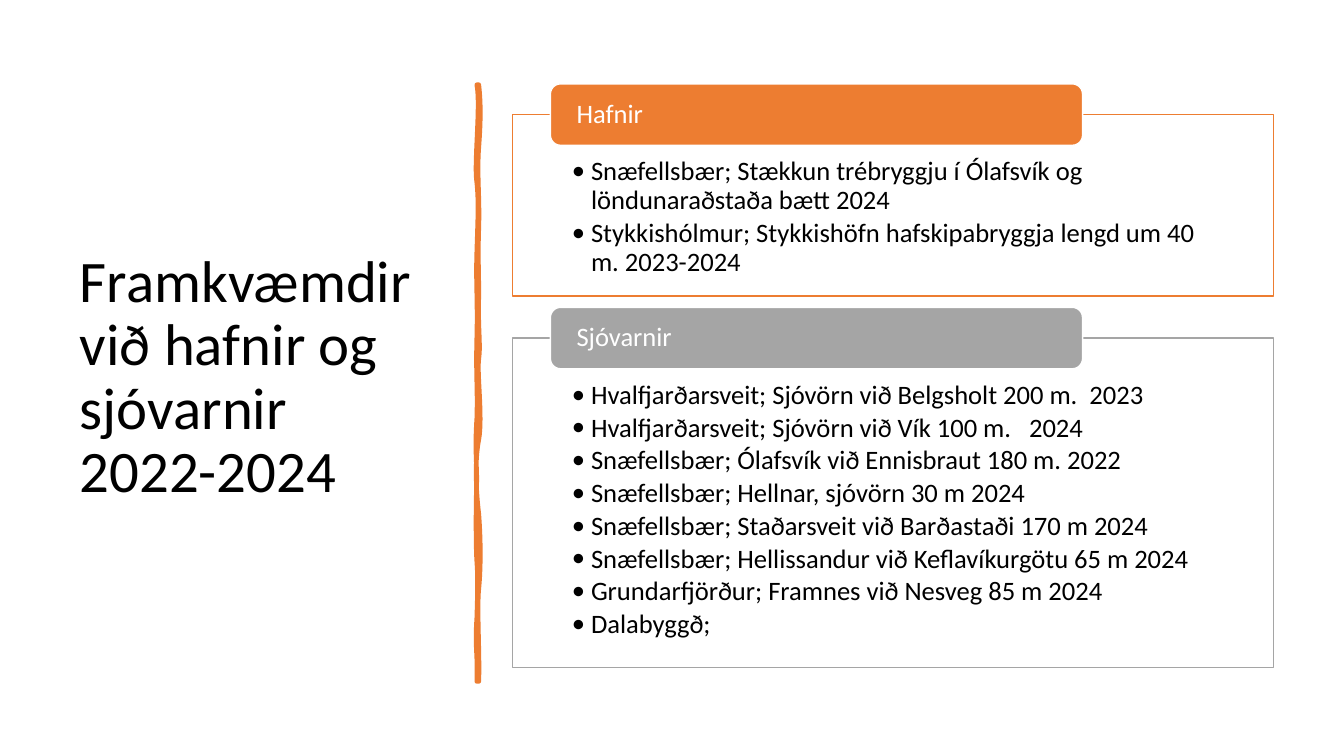
"""Build the slide on harbour and sea defence works."""
from dataclasses import dataclass

from lxml import etree
from pptx import Presentation
from pptx.dml.color import RGBColor
from pptx.enum.shapes import MSO_SHAPE
from pptx.enum.text import MSO_ANCHOR, PP_ALIGN
from pptx.oxml.ns import qn
from pptx.shapes.autoshape import Shape
from pptx.slide import Slide
from pptx.text.text import TextFrame, _Paragraph
from pptx.util import Emu, Inches, Pt

RECTANGLE = MSO_SHAPE.RECTANGLE
ROUNDED = MSO_SHAPE.ROUNDED_RECTANGLE
TOP, MIDDLE = MSO_ANCHOR.TOP, MSO_ANCHOR.MIDDLE
LEFT = PP_ALIGN.LEFT

ORANGE = RGBColor(0xED, 0x7D, 0x31)
GRAY = RGBColor(0xA5, 0xA5, 0xA5)
WHITE = RGBColor(0xFF, 0xFF, 0xFF)
BLACK = RGBColor(0x00, 0x00, 0x00)

FONT = "Calibri"
TITLE_SIZE, BODY_SIZE = 42, 19
SLIDE_WIDTH, SLIDE_HEIGHT = Inches(13.333), Inches(7.5)
GRID_ROWS = 750
CELL = SLIDE_HEIGHT // GRID_ROWS

PANEL_LEFT, PANEL_WIDTH = 508.3, 755
TAB_LEFT, TAB_WIDTH, TAB_HEIGHT, TAB_RISE = 546, 528, 61, 30.5
BULLET_INDENT = 19

BRUSH_START = (475, 84)
BRUSH_CURVES = (
    ((477, 102), (477, 119), (475, 146)),
    ((473, 173), (476, 195), (475, 226)),
    ((474, 257), (475, 262), (475, 294)),
    ((474, 325), (477, 342), (475, 356)),
    ((473, 370), (479, 414), (475, 436)),
    ((471, 457), (472, 484), (475, 510)),
    ((477, 536), (477, 564), (475, 584)),
    ((473, 603), (476, 650), (475, 676)),
    ((474, 676), (473, 676), (473, 676)),
    ((474, 646), (471, 644), (473, 613)),
    ((474, 583), (474, 570), (473, 557)),
    ((472, 544), (472, 495), (473, 477)),
    ((473, 459), (471, 445), (473, 415)),
    ((474, 386), (472, 373), (473, 335)),
    ((474, 298), (472, 281), (473, 250)),
    ((474, 218), (475, 200), (473, 181)),
    ((470, 163), (477, 104), (473, 84)),
    ((474, 84), (474, 84), (475, 84)),
)


@dataclass(frozen=True)
class Box:
    """A place in grid cells."""
    left: float
    top: float
    width: float
    height: float

    def lengths(self) -> tuple[Emu, Emu, Emu, Emu]:
        """Return the place as slide lengths."""
        return cells(self.left), cells(self.top), cells(self.width), cells(self.height)


@dataclass(frozen=True)
class Panel:
    """A headed frame with a list of works."""
    heading: str
    color: RGBColor
    top: float
    height: float
    works: tuple[str, ...]


TITLE = "Framkvæmdir við hafnir og sjóvarnir 2022-2024"
TITLE_BOX = Box(69.5, 70, 374, 611)
PANELS = (
    Panel("Hafnir", ORANGE, 113.7, 180, (
        "Snæfellsbær; Stækkun trébryggju í Ólafsvík og löndunaraðstaða bætt 2024",
        "Stykkishólmur; Stykkishöfn hafskipabryggja lengd um 40 m. 2023-2024",
    )),
    Panel("Sjóvarnir", GRAY, 335.4, 327, (
        "Hvalfjarðarsveit; Sjóvörn við Belgsholt 200 m.  2023",
        "Hvalfjarðarsveit; Sjóvörn við Vík 100 m.   2024",
        "Snæfellsbær; Ólafsvík við Ennisbraut 180 m. 2022",
        "Snæfellsbær; Hellnar, sjóvörn 30 m 2024",
        "Snæfellsbær; Staðarsveit við Barðastaði 170 m 2024",
        "Snæfellsbær; Hellissandur við Keflavíkurgötu 65 m 2024",
        "Grundarfjörður; Framnes við Nesveg 85 m 2024",
        "Dalabyggð;",
    )),
)


def cells(count: float) -> Emu:
    """Turn grid cells into a slide length."""
    return Emu(round(count * CELL))


def set_frame(frame: TextFrame, anchor: MSO_ANCHOR, insets: tuple[int, int, int, int]) -> None:
    """Set wrapping, anchor and insets of a text frame."""
    frame.word_wrap = True
    frame.vertical_anchor = anchor
    frame.margin_left, frame.margin_top, frame.margin_right, frame.margin_bottom = map(cells, insets)


def write(paragraph: _Paragraph, text: str, size: float, color: RGBColor) -> None:
    """Add one run of text to a paragraph."""
    paragraph.alignment = LEFT
    paragraph.line_spacing = 0.9
    run = paragraph.add_run()
    run.text = text
    run.font.name = FONT
    run.font.size = Pt(size)
    run.font.color.rgb = color


def add_bullet(paragraph: _Paragraph) -> None:
    """Give a paragraph a hanging bullet."""
    paragraph.level = 1
    paragraph.space_after = Pt(2.85)
    properties = paragraph._p.get_or_add_pPr()
    properties.set("marL", str(cells(BULLET_INDENT)))
    properties.set("indent", str(-cells(BULLET_INDENT)))
    etree.SubElement(properties, qn("a:buFont")).set("typeface", FONT)
    etree.SubElement(properties, qn("a:buChar")).set("char", "•")


def paint(shape: Shape, fill: RGBColor, line: RGBColor, width: float) -> None:
    """Set the fill and line of a shape."""
    shape.shadow.inherit = False
    shape.fill.solid()
    shape.fill.fore_color.rgb = fill
    shape.line.color.rgb = line
    shape.line.width = Pt(width)


def add_title(slide: Slide) -> None:
    """Add the slide title."""
    frame = slide.shapes.add_textbox(*TITLE_BOX.lengths()).text_frame
    set_frame(frame, MIDDLE, (10, 5, 10, 5))
    write(frame.paragraphs[0], TITLE, TITLE_SIZE, BLACK)


def add_brush_stroke(slide: Slide) -> None:
    """Draw the wavy upright divider with curved segments."""
    builder = slide.shapes.build_freeform(*BRUSH_START, scale=CELL)
    builder.add_line_segments([point for curve in BRUSH_CURVES for point in curve], close=True)
    stroke = builder.convert_to_shape()
    paint(stroke, ORANGE, ORANGE, 3.25)
    segments = list(stroke._element.iter(qn("a:lnTo")))
    for first in range(0, len(segments), 3):
        curve = etree.Element(qn("a:cubicBezTo"))
        segments[first].addprevious(curve)
        for segment in segments[first:first + 3]:
            curve.append(segment[0])
            segment.getparent().remove(segment)


def add_panel(slide: Slide, panel: Panel) -> None:
    """Add a frame with its list and heading tab."""
    frame_box = Box(PANEL_LEFT, panel.top, PANEL_WIDTH, panel.height)
    frame_shape = slide.shapes.add_shape(RECTANGLE, *frame_box.lengths())
    paint(frame_shape, WHITE, panel.color, 1)
    fill_color = frame_shape._element.spPr.find(qn("a:solidFill"))[0]
    etree.SubElement(fill_color, qn("a:alpha")).set("val", "90000")
    frame = frame_shape.text_frame
    set_frame(frame, TOP, (59, 43, 59, 15))
    for index, work in enumerate(panel.works):
        paragraph = frame.add_paragraph() if index else frame.paragraphs[0]
        write(paragraph, work, BODY_SIZE, BLACK)
        add_bullet(paragraph)

    tab_box = Box(TAB_LEFT, panel.top - TAB_RISE, TAB_WIDTH, TAB_HEIGHT)
    tab = slide.shapes.add_shape(ROUNDED, *tab_box.lengths())
    paint(tab, panel.color, WHITE, 1)
    set_frame(tab.text_frame, MIDDLE, (23, 0, 23, 0))
    write(tab.text_frame.paragraphs[0], panel.heading, BODY_SIZE, WHITE)


def main() -> None:
    """Build and save the presentation."""
    presentation = Presentation()
    presentation.slide_width, presentation.slide_height = SLIDE_WIDTH, SLIDE_HEIGHT
    slide = presentation.slides.add_slide(presentation.slide_layouts[6])
    add_title(slide)
    add_brush_stroke(slide)
    for panel in PANELS:
        add_panel(slide, panel)
    presentation.save("out.pptx")


if __name__ == "__main__":
    main()
